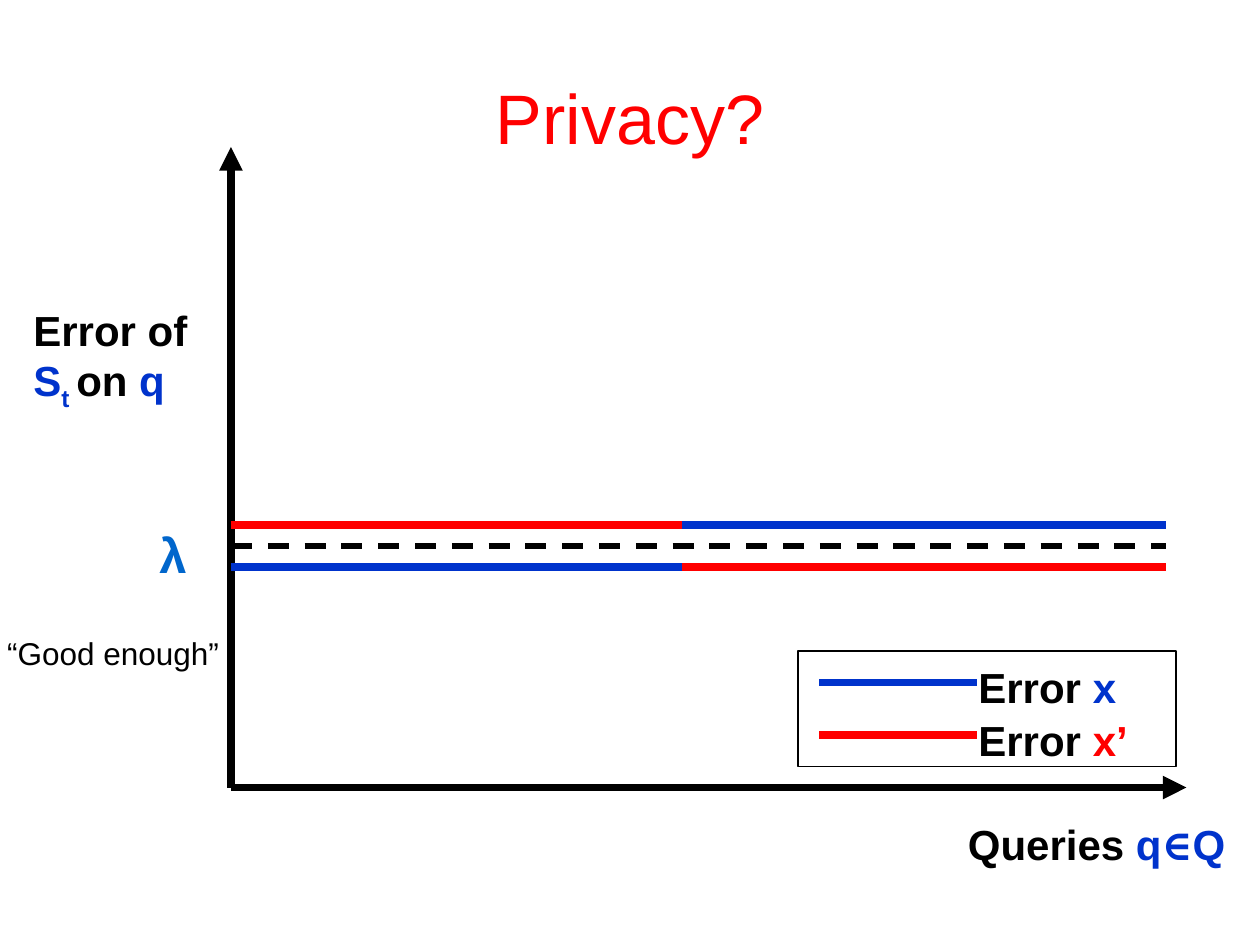
from pptx import Presentation
from pptx.dml.color import RGBColor
from pptx.enum.dml import MSO_LINE
from pptx.enum.shapes import MSO_CONNECTOR, MSO_SHAPE
from pptx.enum.text import MSO_ANCHOR, PP_ALIGN
from pptx.oxml.ns import qn
from pptx.util import Pt
from lxml import etree

STRAIGHT = MSO_CONNECTOR.STRAIGHT
RECTANGLE = MSO_SHAPE.RECTANGLE
DASH = MSO_LINE.DASH
MIDDLE = MSO_ANCHOR.MIDDLE
CENTER = PP_ALIGN.CENTER

THEME = {
    "black": "000000", "blue": "0033CC", "red": "FF0000", "lambda": "0066CC",
    "font": "Arial", "math_font": "Cambria",
    "title": 40, "threshold": 28, "label": 24, "note": 18,
    "thick": 4.5, "dashed": 3, "frame": 0.75,
}

# Content: each label is a box, a size and runs of (text, colour)
TITLE = "Privacy?"
LABELS = [
    ((84, 294, 54, 41), "threshold", [("λ", "lambda")]),
    ((12, 168, 198, 94), "label",
     [("Error of\v", "black"), ("S", "blue"), ("t ", "blue"),
      ("on", "black"), (" q", "blue")]),
    ((546, 462, 240, 36), "label",
     [("Queries ", "black"), ("q", "blue"), ("∈", "blue"), ("Q", "blue")]),
]
NOTE = ((-3, 358.5, 137, 29), "note", [("“Good enough”", "black")])
LEGEND = [("x", "blue"), ("x’", "red")]

# Plot geometry
AXIS_X, AXIS_Y = 132, 450
AXIS_TOP, AXIS_RIGHT = 84, 678
SWITCH_X, DATA_RIGHT = 390, 666
LAMBDA_Y, ERROR_GAP = 312, 12
LEGEND_LEFT, LEGEND_TOP, LEGEND_STEP = 456, 372, 30


def color(name):
    return RGBColor.from_string(THEME[name])


def style_run(run, size, shade, bold):
    run.font.name = THEME["math_font" if run.text == "∈" else "font"]
    run.font.size = Pt(THEME[size])
    run.font.bold = bold
    run.font.color.rgb = color(shade)
    if run.text == "t ":
        run.font._element.set("baseline", "-25000")


def add_label(slide, box, size, pieces, bold=True, wrap=True):
    frame = slide.shapes.add_textbox(*map(Pt, box)).text_frame
    frame.word_wrap = wrap
    if bold:
        frame.margin_top = Pt(6)
    paragraph = frame.paragraphs[0]
    for text, shade in pieces:
        run = paragraph.add_run()
        run.text = text.rstrip("\v")
        style_run(run, size, shade, bold)
        if text.endswith("\v"):
            paragraph.add_line_break()


def add_line(slide, start, end, shade, width="thick", dash=None, arrow=False):
    line = slide.shapes.add_connector(STRAIGHT, *map(Pt, start + end))
    line.line.color.rgb = color(shade)
    line.line.width = Pt(THEME[width])
    if dash is not None:
        line.line.dash_style = dash
    if arrow:
        etree.SubElement(line.line._get_or_add_ln(), qn("a:tailEnd"), type="triangle")
    etree.SubElement(line._element.spPr, qn("a:effectLst"))


def main():
    deck = Presentation()
    deck.slide_width, deck.slide_height = Pt(720), Pt(540)
    slide = deck.slides.add_slide(deck.slide_layouts[5])

    # Title
    title = slide.shapes.title
    title.left, title.top, title.width, title.height = map(Pt, (36, 21.6, 648, 90))
    title.text_frame.text = TITLE
    title.text_frame.vertical_anchor = MIDDLE
    heading = title.text_frame.paragraphs[0]
    heading.alignment = CENTER
    style_run(heading.runs[0], "title", "red", False)

    # Axes and threshold
    origin = (AXIS_X, AXIS_Y)
    for tip in ((AXIS_X, AXIS_TOP), (AXIS_RIGHT, AXIS_Y)):
        add_line(slide, origin, tip, "black", arrow=True)
    add_line(slide, (AXIS_X, LAMBDA_Y), (DATA_RIGHT, LAMBDA_Y), "black", "dashed", DASH)

    # Errors swap sides of the threshold at the switch point
    for shade, side in (("blue", 1), ("red", -1)):
        first_y, second_y = LAMBDA_Y + side * ERROR_GAP, LAMBDA_Y - side * ERROR_GAP
        add_line(slide, (AXIS_X, first_y), (SWITCH_X, first_y), shade)
        add_line(slide, (SWITCH_X, second_y), (DATA_RIGHT, second_y), shade)

    # Labels
    for box, size, pieces in LABELS:
        add_label(slide, box, size, pieces)

    # Legend
    for row, (dataset, shade) in enumerate(LEGEND):
        top = LEGEND_TOP + row * LEGEND_STEP
        add_label(slide, (LEGEND_LEFT + 96, top, 240, 36), "label",
                  [("Error ", "black"), (dataset, shade)])
        add_line(slide, (LEGEND_LEFT + 12, top + 18), (LEGEND_LEFT + 102, top + 18), shade)
    frame = slide.shapes.add_shape(
        RECTANGLE, *map(Pt, (LEGEND_LEFT, LEGEND_TOP, 216, 66)))
    frame.shadow.inherit = False
    frame.fill.background()
    frame.line.color.rgb = color("black")
    frame.line.width = Pt(THEME["frame"])

    # Threshold note
    add_label(slide, *NOTE, bold=False, wrap=False)

    deck.save("out.pptx")


if __name__ == "__main__":
    main()
